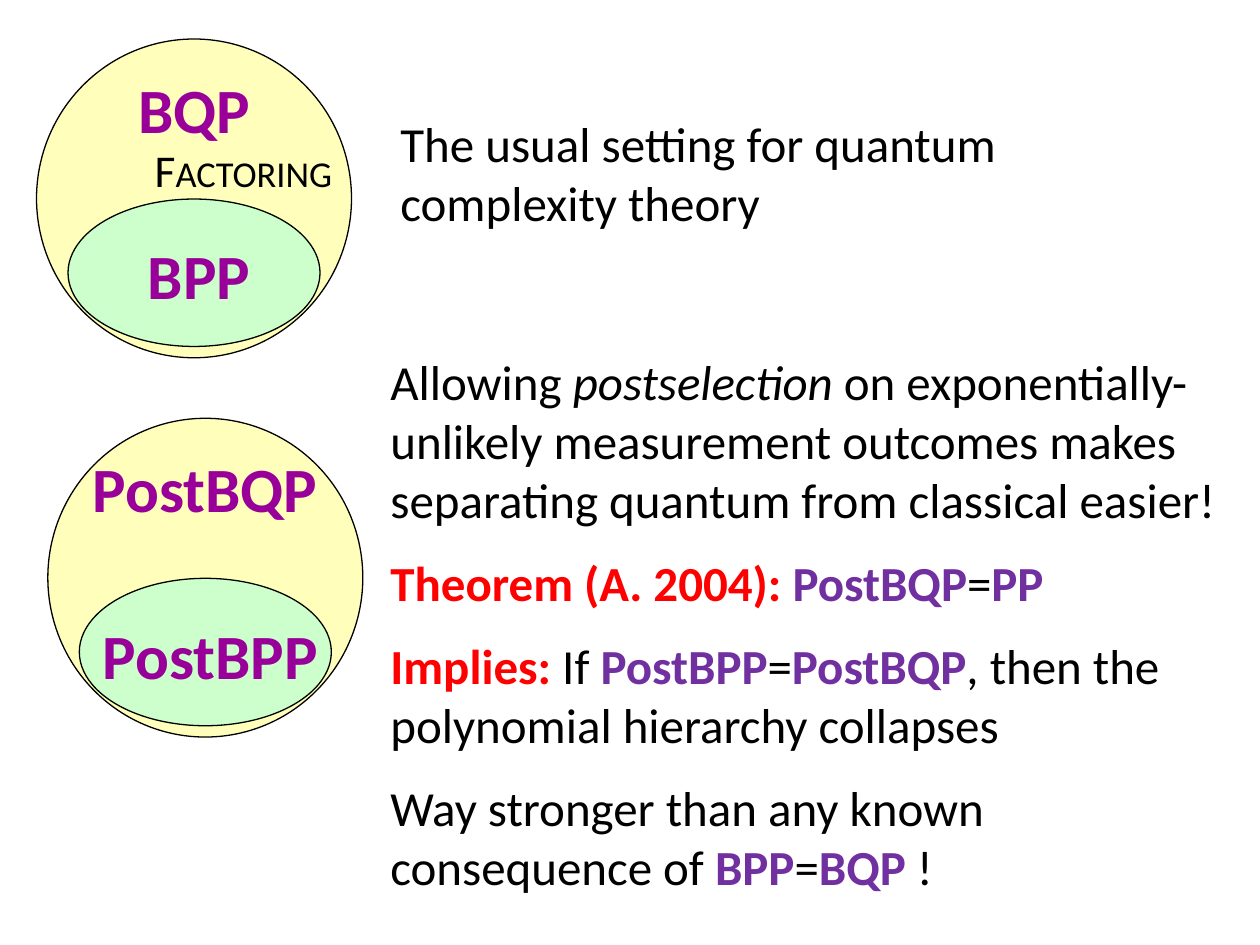
from pptx import Presentation
from pptx.dml.color import RGBColor
from pptx.enum import shapes, text
from pptx.util import Inches, Pt

BLACK = RGBColor(0x00, 0x00, 0x00)
RED = RGBColor(0xFF, 0x00, 0x00)
VIOLET = RGBColor(0x70, 0x30, 0xA0)
PURPLE = RGBColor(0x99, 0x00, 0x99)
YELLOW = RGBColor(0xFF, 0xFF, 0xBB)
GREEN = RGBColor(0xCC, 0xFF, 0xCC)

STYLES = {
    "plain": (BLACK, False, False),
    "italic": (BLACK, False, True),
    "lead": (RED, True, False),
    "class": (VIOLET, True, False),
    "label": (PURPLE, True, False),
}

DIAGRAMS = [
    (0.29, 0.31, "BQP", "BPP"),
    (0.38, 3.32, "PostBQP", "PostBPP"),
]
SETTING = [[("The usual setting for quantum complexity theory", "plain")]]
PROBLEM = [[("Factoring", "plain")]]
ARGUMENT = [
    [("Allowing ", "plain"), ("postselection", "italic"),
     (" on exponentially-unlikely measurement outcomes makes "
      "separating quantum from classical easier!", "plain")],
    [("Theorem (A. 2004): ", "lead"), ("PostBQP", "class"),
     ("=", "plain"), ("PP", "class")],
    [("Implies:", "lead"), (" If ", "plain"), ("PostBPP", "class"),
     ("=", "plain"), ("PostBQP", "class"),
     (", then the polynomial hierarchy collapses", "plain")],
    [("Way stronger than any known consequence of ", "plain"),
     ("BPP", "class"), ("=", "plain"), ("BQP", "class"), (" !", "plain")],
]


def add_text(parent, box, paragraphs, size, align=text.PP_ALIGN.LEFT):
    frame = parent.add_textbox(*map(Inches, box)).text_frame
    frame.word_wrap = True
    for index, pieces in enumerate(paragraphs):
        paragraph = frame.add_paragraph() if index else frame.paragraphs[0]
        paragraph.alignment = align
        paragraph.space_before = Pt(size / 2 if index else 0)
        for words, style in pieces:
            run = paragraph.add_run()
            run.text = words
            font = run.font
            font.name, font.size = "Calibri", Pt(size)
            font.color.rgb, font.bold, font.italic = STYLES[style]
    return frame


def add_class(parent, oval, label_box, label, fill):
    ellipse = parent.add_shape(shapes.MSO_SHAPE.OVAL, *map(Inches, oval))
    ellipse.shadow.inherit = False
    ellipse.fill.solid()
    ellipse.fill.fore_color.rgb = fill
    ellipse.line.color.rgb = BLACK
    ellipse.line.width = Pt(0.75)
    add_text(parent, label_box, [[(label, "label")]], 36, text.PP_ALIGN.CENTER)


def main():
    deck = Presentation()
    deck.slide_width, deck.slide_height = Inches(10), Inches(7.5)
    slide = deck.slides.add_slide(deck.slide_layouts[6])

    add_text(slide.shapes, (3.08, 0.85, 6.7, 1.04), SETTING, 28)
    for left, top, quantum, classical in DIAGRAMS:
        diagram = slide.shapes.add_group_shape().shapes
        add_class(diagram, (left, top, 2.5, 2.53),
                  (left + 0.25, top + 0.2, 2, 0.71), quantum, YELLOW)
        add_class(diagram, (left + 0.25, top + 1.27, 2, 1.17),
                  (left + 0.33, top + 1.52, 1.92, 0.71), classical, GREEN)
    problem = add_text(slide.shapes, (1.13, 1.08, 1.67, 0.54), PROBLEM, 26)
    problem.paragraphs[0].runs[0].font._element.set("cap", "small")
    add_text(slide.shapes, (3, 2.74, 6.78, 4.58), ARGUMENT, 28)

    deck.save("out.pptx")


if __name__ == "__main__":
    main()
